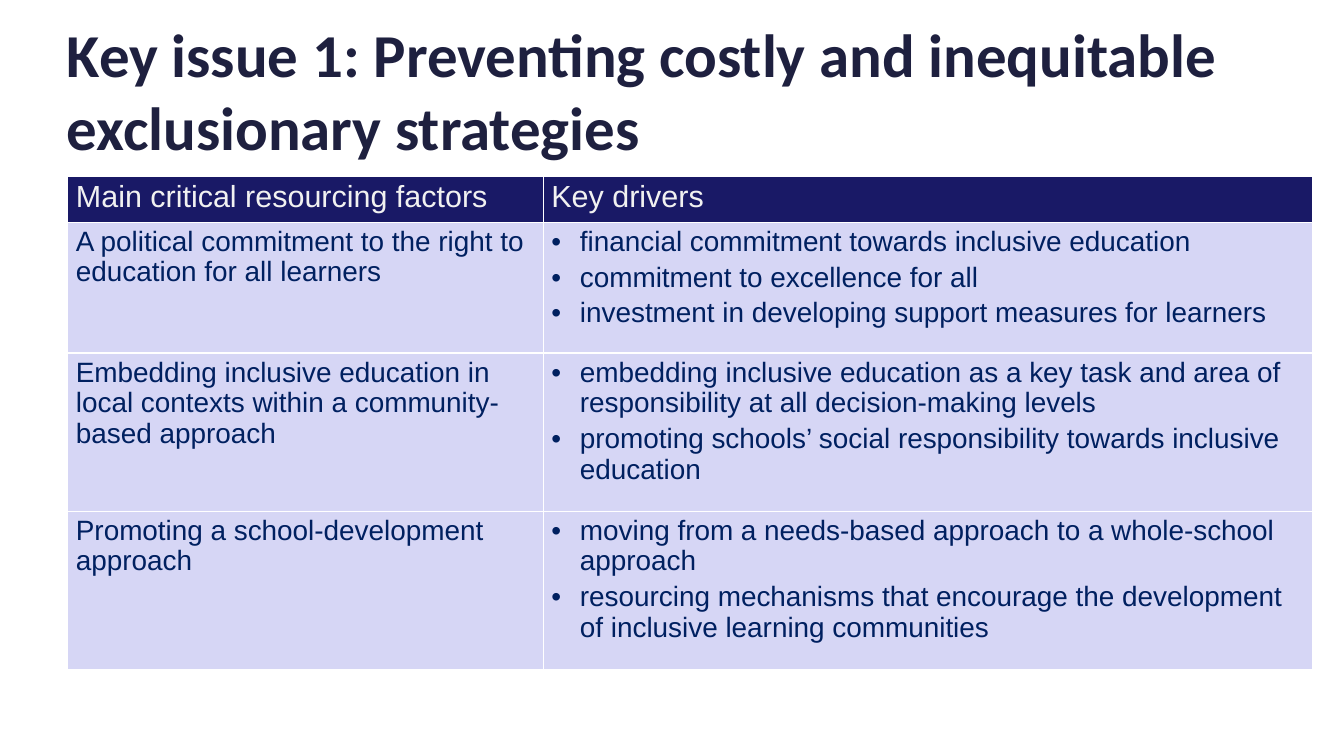
from dataclasses import dataclass

from lxml import etree
from pptx import Presentation
from pptx.dml.color import RGBColor
from pptx.enum.text import MSO_ANCHOR, PP_ALIGN
from pptx.oxml.ns import qn
from pptx.util import Pt

MIDDLE = MSO_ANCHOR.MIDDLE
TOP = MSO_ANCHOR.TOP
LEFT = PP_ALIGN.LEFT

WHITE = "FFFFFF"
INK = "1E203F"
HEADER_TEXT = "F1F1F1"
HEADER_FILL = "191966"
BODY_TEXT = "002060"
BODY_FILL = "D6D6F5"

COLUMN_WIDTHS = (374.4, 606.2)
BULLET_INDENT = 22.5
BORDER_TAGS = ("a:lnL", "a:lnR", "a:lnT", "a:lnB")


@dataclass(frozen=True)
class TableRow:
    height: float
    factor: str
    drivers: tuple[str, ...]


HEADER = TableRow(36, "Main critical resourcing factors", ("Key drivers",))
BODY = (
    TableRow(103, "A political commitment to the right to education for all learners", (
        "financial commitment towards inclusive education",
        "commitment to excellence for all",
        "investment in developing support measures for learners",
    )),
    TableRow(124.6, "Embedding inclusive education in local contexts within a community-based approach", (
        "embedding inclusive education as a key task and area of responsibility at all decision-making levels",
        "promoting schools’ social responsibility towards inclusive education",
    )),
    TableRow(124.6, "Promoting a school-development approach", (
        "moving from a needs-based approach to a whole-school approach",
        "resourcing mechanisms that encourage the development of inclusive learning communities",
    )),
)


def color(value: str) -> RGBColor:
    return RGBColor.from_string(value)


def add_bullet(paragraph) -> None:
    properties = paragraph._p.get_or_add_pPr()
    properties.set("marL", str(Pt(BULLET_INDENT)))
    properties.set("indent", str(-Pt(BULLET_INDENT)))
    font = etree.SubElement(properties, qn("a:buFont"))
    font.set("typeface", "Arial")
    character = etree.SubElement(properties, qn("a:buChar"))
    character.set("char", "•")


def write_text(text_frame, texts: tuple[str, ...], *, size: float, ink: str,
               font: str = "Arial", bold: bool = False, bullets: bool = False,
               line_spacing: float = 1.0, gap: float = 0) -> None:
    text_frame.word_wrap = True
    for index, text in enumerate(texts):
        paragraph = text_frame.add_paragraph() if index else text_frame.paragraphs[0]
        if bullets:
            add_bullet(paragraph)
        paragraph.alignment = LEFT
        paragraph.line_spacing = line_spacing
        paragraph.space_before = Pt(gap if index else 0)
        paragraph.space_after = Pt(gap)
        run = paragraph.add_run()
        run.text = text
        run.font.name = font
        run.font.size = Pt(size)
        run.font.bold = bold
        run.font.color.rgb = color(ink)


def add_borders(cell, value: str, width: float) -> None:
    properties = cell._tc.get_or_add_tcPr()
    for position, tag in enumerate(BORDER_TAGS):
        line = etree.Element(qn(tag), w=str(Pt(width)))
        fill = etree.SubElement(line, qn("a:solidFill"))
        etree.SubElement(fill, qn("a:srgbClr"), val=value)
        properties.insert(position, line)


def style_cell(cell, fill: str) -> None:
    cell.fill.solid()
    cell.fill.fore_color.rgb = color(fill)
    cell.vertical_anchor = TOP
    cell.margin_left = cell.margin_right = Pt(6.5)
    cell.margin_top = cell.margin_bottom = Pt(3.6)
    add_borders(cell, WHITE, 1)


def add_title(slide, text: str) -> None:
    shape = slide.shapes.add_textbox(Pt(52.6), Pt(8.6), Pt(951.8), Pt(124.6))
    text_frame = shape.text_frame
    text_frame.margin_left = text_frame.margin_right = Pt(0)
    text_frame.margin_top = text_frame.margin_bottom = Pt(0)
    text_frame.vertical_anchor = MIDDLE
    write_text(text_frame, (text,), size=48, ink=INK, font="Calibri", bold=True)


def add_factor_table(slide) -> None:
    rows = (HEADER, *BODY)
    height = sum(row.height for row in rows)
    table = slide.shapes.add_table(
        len(rows), len(COLUMN_WIDTHS), Pt(53.3), Pt(139), Pt(sum(COLUMN_WIDTHS)), Pt(height)
    ).table
    for column, width in zip(table.columns, COLUMN_WIDTHS):
        column.width = Pt(width)
    for row_index, row in enumerate(rows):
        table.rows[row_index].height = Pt(row.height)
        is_header = row is HEADER
        for column_index, texts in enumerate(((row.factor,), row.drivers)):
            cell = table.cell(row_index, column_index)
            style_cell(cell, HEADER_FILL if is_header else BODY_FILL)
            write_text(
                cell.text_frame, texts,
                size=24 if is_header else 22,
                ink=HEADER_TEXT if is_header else BODY_TEXT,
                bullets=column_index == 1 and not is_header,
                line_spacing=0.98,
                gap=0 if is_header else 2,
            )


def main() -> None:
    presentation = Presentation()
    presentation.slide_width = Pt(1058.4)
    presentation.slide_height = Pt(595.4)
    slide = presentation.slides.add_slide(presentation.slide_layouts[6])
    slide.background.fill.solid()
    slide.background.fill.fore_color.rgb = color(WHITE)
    add_title(slide, "Key issue 1: Preventing costly and inequitable exclusionary strategies")
    add_factor_table(slide)
    presentation.save("out.pptx")


if __name__ == "__main__":
    main()
